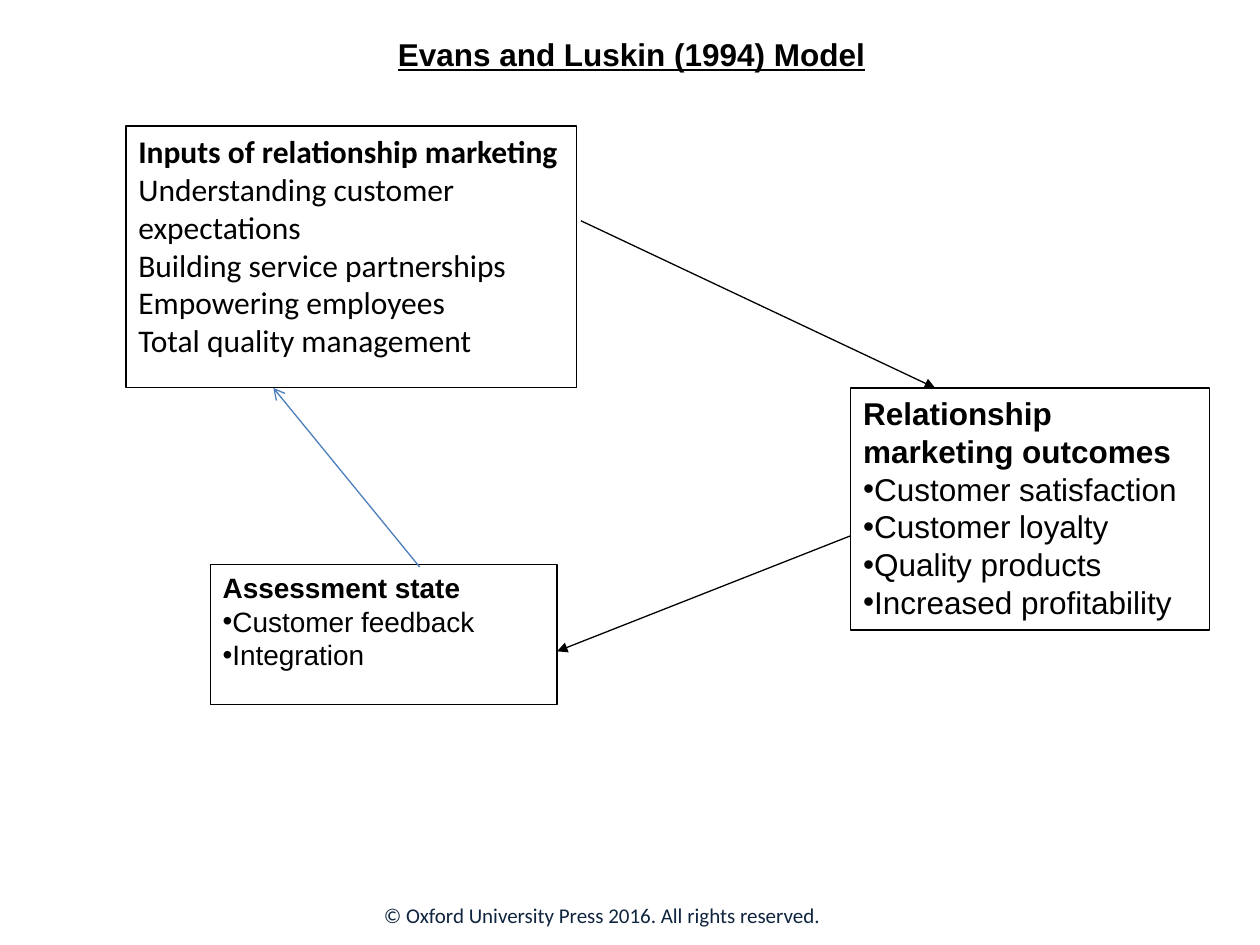
from dataclasses import dataclass

from lxml.etree import SubElement
from pptx import Presentation
from pptx.dml.color import RGBColor
from pptx.enum.shapes import MSO_CONNECTOR, MSO_SHAPE
from pptx.enum.text import MSO_ANCHOR, MSO_AUTO_SIZE, PP_ALIGN
from pptx.oxml.ns import qn
from pptx.util import Cm, Pt


@dataclass(frozen=True)
class Theme:
    ink: str = "000000"
    paper: str = "FFFFFF"
    feedback: str = "4B7EBC"
    footer: str = "0F243E"
    heading_font: str = "Arial"
    body_font: str = "Calibri"
    large: int = 18
    medium: int = 16
    small: int = 12
    line: float = 0.75


THEME = Theme()

TITLE = "Evans and Luskin (1994) Model"
COPYRIGHT = "© Oxford University Press 2016. All rights reserved."

STAGES = [
    {
        "heading": "Assessment state",
        "points": ["Customer feedback", "Integration"],
        "place": (4.24, 11.38, 6.99, 2.82),
        "font": THEME.heading_font,
        "size": THEME.medium,
        "bulleted": True,
    },
    {
        "heading": "Relationship marketing outcomes",
        "points": ["Customer satisfaction", "Customer loyalty",
                   "Quality products", "Increased profitability"],
        "place": (17.15, 7.82, 7.24, 4.88),
        "font": THEME.heading_font,
        "size": THEME.large,
        "bulleted": True,
    },
    {
        "heading": "Inputs of relationship marketing",
        "points": ["Understanding customer expectations",
                   "Building service partnerships",
                   "Empowering employees", "Total quality management"],
        "place": (2.54, 2.54, 9.09, 5.28),
        "font": THEME.body_font,
        "size": THEME.large,
        "bulleted": False,
    },
]

FLOWS = [
    ((17.15, 10.8), (11.23, 13.13), THEME.ink, "triangle"),
    ((11.71, 4.45), (18.85, 7.82), THEME.ink, "triangle"),
    ((8.46, 11.43), (5.51, 7.82), THEME.feedback, "arrow"),
]


def lengths(values):
    return [Cm(value) for value in values]


def add_run(paragraph, text, font, size, color, bold=False, underline=False):
    run = paragraph.add_run()
    run.text = text
    run.font.name = font
    run.font.size = Pt(size)
    run.font.color.rgb = RGBColor.from_string(color)
    run.font.bold = bold
    run.font.underline = underline


def add_bullet(paragraph):
    properties = paragraph._p.get_or_add_pPr()
    SubElement(properties, qn("a:buFont"), typeface=THEME.heading_font)
    SubElement(properties, qn("a:buChar"), char="•")


def add_stage(slide, stage):
    box = slide.shapes.add_shape(MSO_SHAPE.RECTANGLE, *lengths(stage["place"]))
    box.shadow.inherit = False
    box.fill.solid()
    box.fill.fore_color.rgb = RGBColor.from_string(THEME.paper)
    box.line.color.rgb = RGBColor.from_string(THEME.ink)
    box.line.width = Pt(THEME.line)
    frame = box.text_frame
    frame.word_wrap = True
    frame.vertical_anchor = MSO_ANCHOR.TOP
    for index, text in enumerate([stage["heading"], *stage["points"]]):
        paragraph = frame.add_paragraph() if index else frame.paragraphs[0]
        paragraph.alignment = PP_ALIGN.LEFT
        if index and stage["bulleted"]:
            add_bullet(paragraph)
        add_run(paragraph, text, stage["font"], stage["size"], THEME.ink,
                bold=index == 0)


def add_flow(slide, start, end, color, head):
    flow = slide.shapes.add_connector(
        MSO_CONNECTOR.STRAIGHT, *lengths(start + end))
    flow.line.color.rgb = RGBColor.from_string(color)
    flow.line.width = Pt(THEME.line)
    SubElement(flow.line._get_or_add_ln(), qn("a:tailEnd"), type=head)
    SubElement(flow._element.spPr, qn("a:effectLst"))


def add_label(slide, place, text, font, size, color, wrap, **emphasis):
    label = slide.shapes.add_textbox(*lengths(place))
    frame = label.text_frame
    frame.word_wrap = wrap
    add_run(frame.paragraphs[0], text, font, size, color, **emphasis)
    return frame


def main():
    presentation = Presentation()
    presentation.slide_width, presentation.slide_height = Cm(25.4), Cm(19.05)
    slide = presentation.slides.add_slide(presentation.slide_layouts[6])

    for stage in STAGES:
        add_stage(slide, stage)
    for flow in FLOWS:
        add_flow(slide, *flow)

    footer = add_label(slide, (7.49, 17.93, 10.62, 1.02), COPYRIGHT,
                       THEME.body_font, THEME.small, THEME.footer, True)
    footer.vertical_anchor = MSO_ANCHOR.MIDDLE
    title = add_label(slide, (7.77, 0.58, 10.03, 1.02), TITLE,
                      THEME.heading_font, THEME.large, THEME.ink, False,
                      bold=True, underline=True)
    title.auto_size = MSO_AUTO_SIZE.SHAPE_TO_FIT_TEXT

    presentation.save("out.pptx")


if __name__ == "__main__":
    main()
